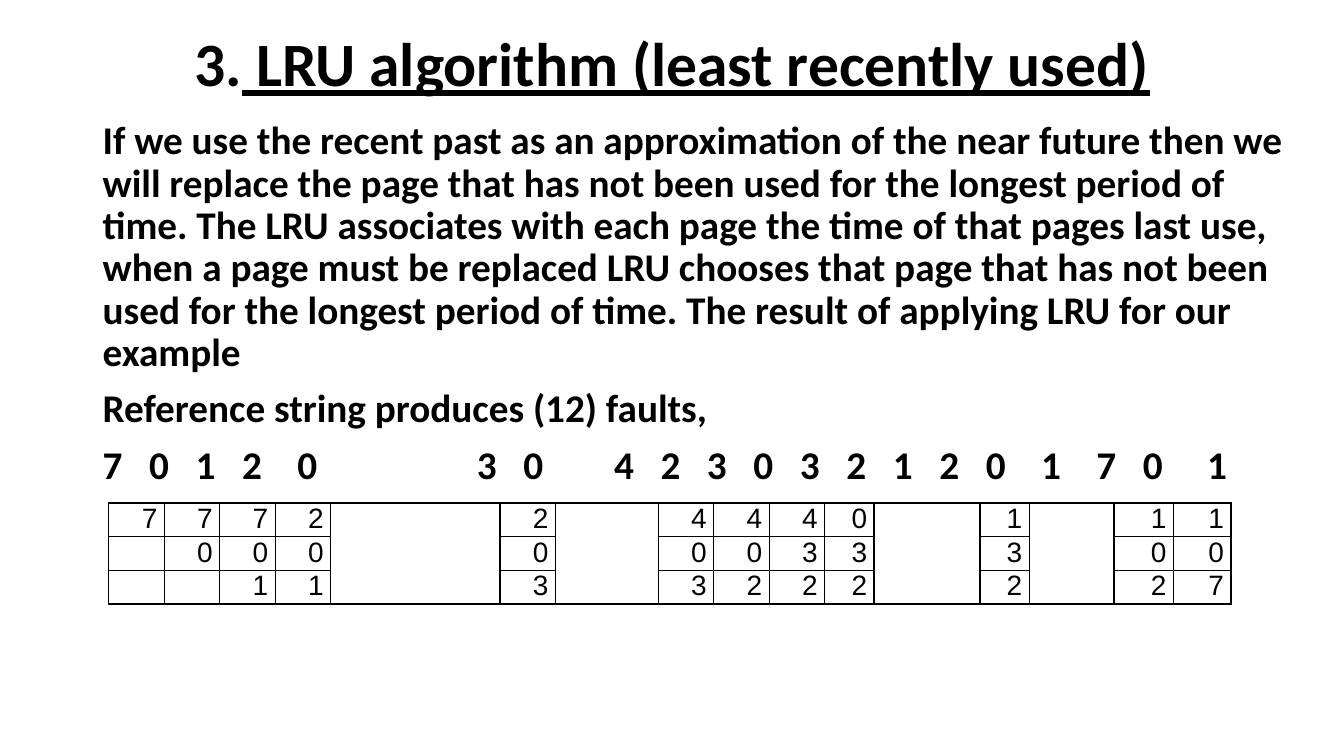
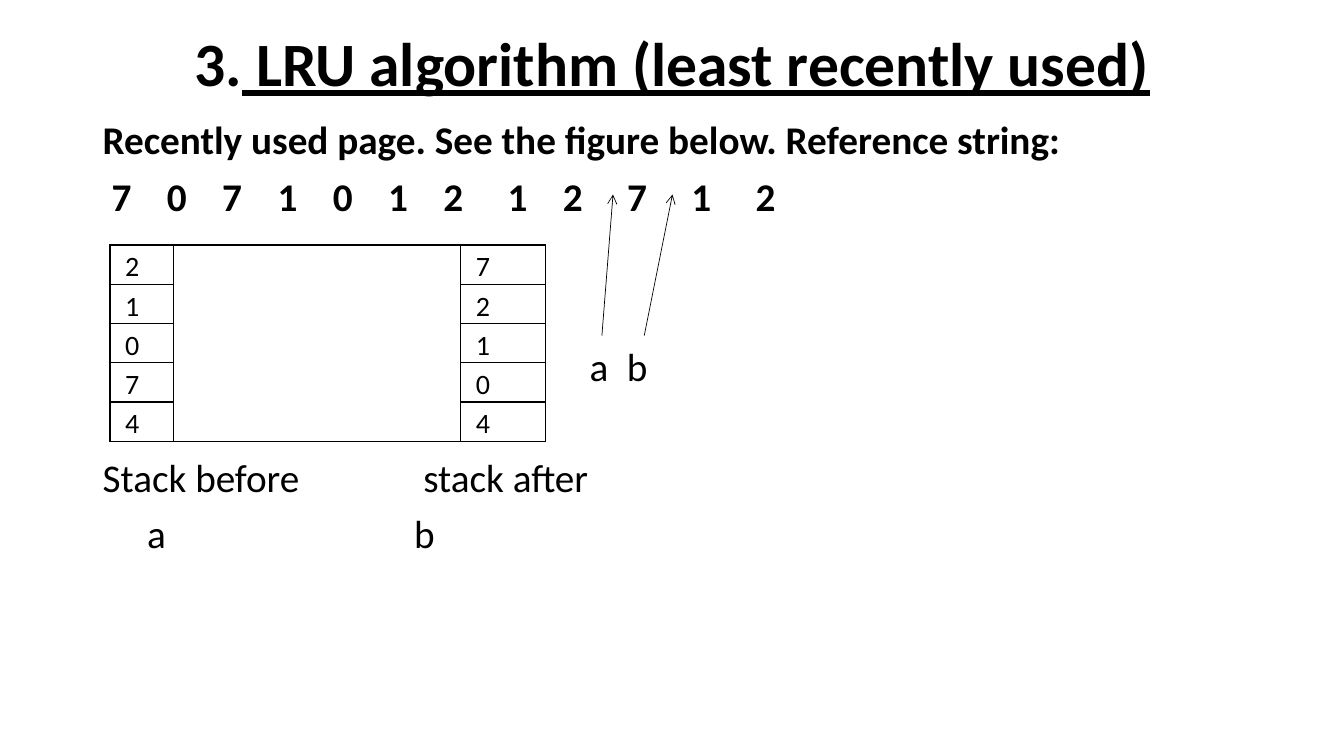
from dataclasses import dataclass

from lxml.etree import SubElement
from pptx import Presentation
from pptx.dml.color import RGBColor
from pptx.enum.shapes import MSO_CONNECTOR
from pptx.enum.text import MSO_ANCHOR, PP_ALIGN
from pptx.oxml.ns import qn
from pptx.util import Inches, Pt


@dataclass(frozen=True)
class Theme:
    font: str = "Calibri"
    rtl_font: str = "Arial"
    ink: RGBColor = RGBColor(0, 0, 0)
    title: int = 44
    body: int = 28
    cell: int = 20
    digit: float = 14.19  # width of a bold body digit, in points
    space: float = 6.33  # width of a body space, in points


THEME = Theme()

TITLE = [("3.", {}), (" LRU algorithm (least recently used)", {"underline": True})]
TITLE_BOX = (0.92, 0.18, 11.5, 0.97)

INTRO = (
    "If we use the recent past as an approximation of the near future then we "
    "will replace the page that has not been used for the longest period of "
    "time. The LRU associates with each page the time of that pages last use, "
    "when a page must be replaced LRU chooses that page that has not been used "
    "for the longest period of time. The result of applying LRU for our example"
)
FAULTS = "Reference string produces (12) faults,"
FIGURE = "Recently used page. See the figure below. Reference string:"

# Each reference string: its pages, and the spaces ahead of each page
LONG_REFS = ("70120304230321201701",
             [0, 3, 3, 3, 4, 18, 3, 8, 3, 3, 3, 3, 3, 3, 3, 3, 4, 4, 3, 5])
SHORT_REFS = ("707101212712", [1, 4, 4, 4, 4, 4, 4, 5, 4, 5, 5, 5])

# Each column: width, and its pages from top to bottom ("" is one merged gap)
FRAMES = [
    (0.55, "7"), (0.55, "70"), (0.55, "701"), (0.55, "201"), (1.68, ""),
    (0.55, "203"), (1.02, ""), (0.55, "403"), (0.55, "402"), (0.55, "432"),
    (0.49, "032"), (1.05, ""), (0.49, "132"), (0.84, ""), (0.59, "102"),
    (0.57, "107"),
]
STACKS = [(0.63, "21074"), (2.85, ""), (0.84, "72104")]

ARROWS = [((5.97, 3.33), (6.08, 1.93)), ((6.39, 3.33), (6.67, 1.93))]
MARKS = [("a\tb", [0.37])]
LABELS = [("Stack before\tstack after", [3.18]), ("\ta\tb", [0.44, 3.09])]


def style(run, size, **extra):
    look = {"name": THEME.font, "size": Pt(size), **extra}
    for key, value in look.items():
        setattr(run.font, key, value)
    run.font.color.rgb = THEME.ink


def set_tabs(para, stops):
    tabs = SubElement(para._p.get_or_add_pPr(), qn("a:tabLst"))
    for stop in stops:
        SubElement(tabs, qn("a:tab"), pos=str(int(stop)), algn="l")


def add_box(slide, box):
    frame = slide.shapes.add_textbox(*map(Inches, box)).text_frame
    frame.word_wrap = True
    return frame


def add_title(slide):
    frame = add_box(slide, TITLE_BOX)
    frame.vertical_anchor = MSO_ANCHOR.MIDDLE
    para = frame.paragraphs[0]
    para.alignment, para.line_spacing = PP_ALIGN.CENTER, 0.9
    for text, extra in TITLE:
        run = para.add_run()
        run.text = text
        style(run, THEME.title, bold=True, **extra)


def add_text(slide, box, lines, bold):
    """Write (text, tab stops in inches) pairs, one paragraph each."""
    frame = add_box(slide, box)
    for i, (text, stops) in enumerate(lines):
        para = frame.add_paragraph() if i else frame.paragraphs[0]
        para.line_spacing, para.space_before = 0.9, Pt(10)
        run = para.add_run()
        run.text = text
        style(run, THEME.body, bold=bold)
        if stops:
            set_tabs(para, [Inches(stop) for stop in stops])


def ref_line(pages, gaps):
    """Turn the spaces between pages into tab stops."""
    text, stops, left = "", [], 0
    for page, gap in zip(pages, gaps):
        left += gap * THEME.space
        if gap:
            text += "\t"
            stops.append(left / 72)
        text += page
        left += THEME.digit
    return text, stops


def add_edges(cell):
    props = cell._tc.get_or_add_tcPr()
    for i, side in enumerate(("lnL", "lnR", "lnT", "lnB")):
        edge = props.makeelement(qn("a:" + side), {"w": str(Pt(1))})
        fill = SubElement(edge, qn("a:solidFill"))
        SubElement(fill, qn("a:srgbClr"), val=str(THEME.ink))
        props.insert(i, edge)


def add_grid(slide, left, top, height, columns, pad=0.07, spacing=1.0, rtl=False):
    count = max(len(pages) for _, pages in columns)
    width = sum(wide for wide, _ in columns)
    box = map(Inches, (left, top, width, height * count))
    table = slide.shapes.add_table(count, len(columns), *box).table
    table.first_row = table.horz_banding = False
    for row in table.rows:
        row.height = Inches(height)
    insets = {"margin_left": Inches(pad), "margin_right": Inches(0.07),
              "margin_top": 0, "margin_bottom": 0}
    for c, (wide, pages) in enumerate(columns):
        table.columns[c].width = Inches(wide)
        for r in range(count):
            cell = table.cell(r, c)
            cell.fill.background()
            add_edges(cell)
            for key, value in insets.items():
                setattr(cell, key, value)
            if r < len(pages):
                para = cell.text_frame.paragraphs[0]
                para.line_spacing = spacing
                run = para.add_run()
                run.text = pages[r]
                style(run, THEME.cell, bold=False)
                if rtl:
                    para.alignment = PP_ALIGN.RIGHT
                    para._p.get_or_add_pPr().set("rtl", "1")
                    SubElement(run.font._element, qn("a:cs"),
                               typeface=THEME.rtl_font)
        if not pages:
            table.cell(0, c).merge(table.cell(count - 1, c))


def add_arrow(slide, start, end):
    arrow = slide.shapes.add_connector(
        MSO_CONNECTOR.STRAIGHT, *map(Inches, start + end))
    arrow.line.color.rgb = THEME.ink
    arrow.line.width = Pt(0.5)
    SubElement(arrow.line._get_or_add_ln(), qn("a:tailEnd"), type="arrow")
    SubElement(arrow._element.spPr, qn("a:effectLst"))


def add_slide(deck):
    slide = deck.slides.add_slide(deck.slide_layouts[6])
    add_title(slide)
    return slide


def main():
    deck = Presentation()
    deck.slide_width, deck.slide_height = Inches(13.33), Inches(7.5)

    slide = add_slide(deck)
    lines = [(INTRO, []), (FAULTS, []), ref_line(*LONG_REFS)]
    add_text(slide, (0.92, 1.15, 12.2, 3.8), lines, bold=True)
    add_grid(slide, 1.08, 4.99, 0.32, FRAMES, rtl=True)

    slide = add_slide(deck)
    lines = [(FIGURE, []), ref_line(*SHORT_REFS)]
    add_text(slide, (0.92, 1.15, 11.5, 1.2), lines, bold=True)
    add_grid(slide, 1.09, 2.43, 0.39, STACKS, pad=0.15, spacing=1.15)
    add_text(slide, (5.75, 3.4, 1, 0.55), MARKS, bold=False)
    add_text(slide, (0.92, 4.5, 6, 1.2), LABELS, bold=False)
    for start, end in ARROWS:
        add_arrow(slide, start, end)

    deck.save("out.pptx")


if __name__ == "__main__":
    main()
